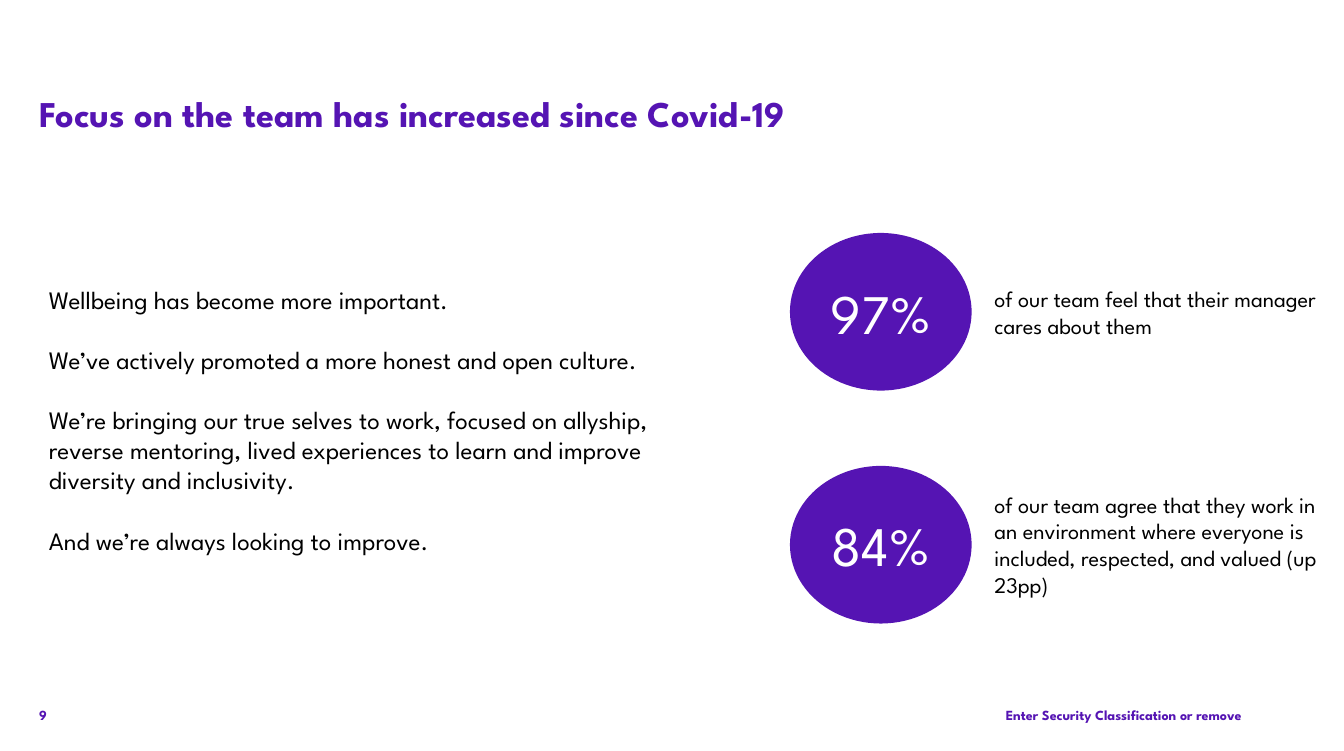
import pptx
import pptx.util
import pptx.dml.color
import pptx.enum.shapes
import pptx.enum.text

TITLE = "Focus on the team has increased since Covid-19"
STORY = [
    "Wellbeing has become more important.",
    "We’ve actively promoted a more honest and open culture.",
    "We’re bringing our true selves to work, focused on allyship, reverse mentoring, "
    "lived experiences to learn and improve diversity and inclusivity.",
    "And we’re always looking to improve.",
]
RESULTS = [
    {"share": "97%", "statement": "of our team feel that their manager cares about them",
     "top": 37.3, "height": 8.56},
    {"share": "84%", "statement": "of our team agree that they work in an environment where "
     "everyone is included, respected, and valued (up 23pp)", "top": 64.71, "height": 19.39},
]
PAGE_NUMBER = "9"
CLASSIFICATION = "Enter Security Classification or remove"

PURPLE = pptx.dml.color.RGBColor(0x55, 0x14, 0xB3)
BLACK = pptx.dml.color.RGBColor(0, 0, 0)
WHITE = pptx.dml.color.RGBColor(255, 255, 255)
ALIGN = pptx.enum.text.PP_ALIGN
ANCHOR = pptx.enum.text.MSO_ANCHOR
FONT = "League Spartan"
HEADING = {"name": FONT, "size": pptx.util.Pt(26), "bold": True}
FOOTER = {"name": FONT, "size": pptx.util.Pt(10), "bold": True}
BODY = {"name": FONT, "size": pptx.util.Pt(18), "bold": False}
STATEMENT = {"name": FONT, "size": pptx.util.Pt(16), "bold": False}
FIGURE = {"name": FONT, "size": pptx.util.Pt(40), "bold": False}
NO_INSETS = dict.fromkeys(("margin_left", "margin_top", "margin_right", "margin_bottom"), 0)

WIDTH, HEIGHT = pptx.util.Inches(13.39), pptx.util.Inches(7.48)
MARGIN = 2.91
FOOTER_TOP, FOOTER_HEIGHT = 92.38, 3.88
CIRCLE_LEFT, CIRCLE_TOP, CIRCLE_WIDTH, CIRCLE_HEIGHT = 58.78, 31.02, 13.52, 20.99
CIRCLE_PITCH = 31.02
STATEMENT_LEFT, STATEMENT_WIDTH = 73.26, 26.44


def place(left, top, width, height):
    return (int(WIDTH * left / 100), int(HEIGHT * top / 100),
            int(WIDTH * width / 100), int(HEIGHT * height / 100))


def apply(target, values):
    for name, value in values.items():
        setattr(target, name, value)


def write(box, lines, style, color, align=ALIGN.LEFT, anchor=ANCHOR.TOP, insets=None, gap=0):
    frame = box.text_frame
    apply(frame, {"word_wrap": True, "vertical_anchor": anchor, **(insets or {})})
    for index, line in enumerate(lines):
        para = frame.add_paragraph() if index else frame.paragraphs[0]
        para.alignment = align
        if index:
            para.space_before = pptx.util.Pt(gap)
        span = para.add_run()
        span.text = line
        apply(span.font, style)
        span.font.color.rgb = color


def add_text(page, area, lines, style, color, **options):
    write(page.shapes.add_textbox(*place(*area)), lines, style, color, **options)


def add_circle(page, area, figure):
    circle = page.shapes.add_shape(pptx.enum.shapes.MSO_SHAPE.OVAL, *place(*area))
    circle.shadow.inherit = False
    circle.fill.solid()
    circle.fill.fore_color.rgb = PURPLE
    circle.line.fill.background()
    write(circle, [figure], FIGURE, WHITE, align=ALIGN.CENTER, anchor=ANCHOR.MIDDLE)


def main():
    deck = pptx.Presentation()
    apply(deck, {"slide_width": WIDTH, "slide_height": HEIGHT})
    page = deck.slides.add_slide(deck.slide_layouts.get_by_name("Title Only"))

    title = page.shapes.title
    apply(title, dict(zip(("left", "top", "width", "height"),
                          place(MARGIN, 12.17, 94.17, 11.63))))
    write(title, [TITLE], HEADING, PURPLE, insets=NO_INSETS)

    add_text(page, (MARGIN, FOOTER_TOP, MARGIN, FOOTER_HEIGHT), [PAGE_NUMBER],
             FOOTER, PURPLE, anchor=ANCHOR.BOTTOM, insets=NO_INSETS)
    add_text(page, (72.37, FOOTER_TOP, 20.01, FOOTER_HEIGHT), [CLASSIFICATION],
             FOOTER, PURPLE, align=ALIGN.RIGHT, anchor=ANCHOR.BOTTOM, insets=NO_INSETS)
    add_text(page, (MARGIN, 37.17, 50.56, 41.84), STORY, BODY, BLACK, gap=21.6)

    for row, result in enumerate(RESULTS):
        circle_top = CIRCLE_TOP + row * CIRCLE_PITCH
        add_circle(page, (CIRCLE_LEFT, circle_top, CIRCLE_WIDTH, CIRCLE_HEIGHT), result["share"])
        add_text(page, (STATEMENT_LEFT, result["top"], STATEMENT_WIDTH, result["height"]),
                 [result["statement"]], STATEMENT, BLACK)

    deck.save("out.pptx")


if __name__ == "__main__":
    main()
